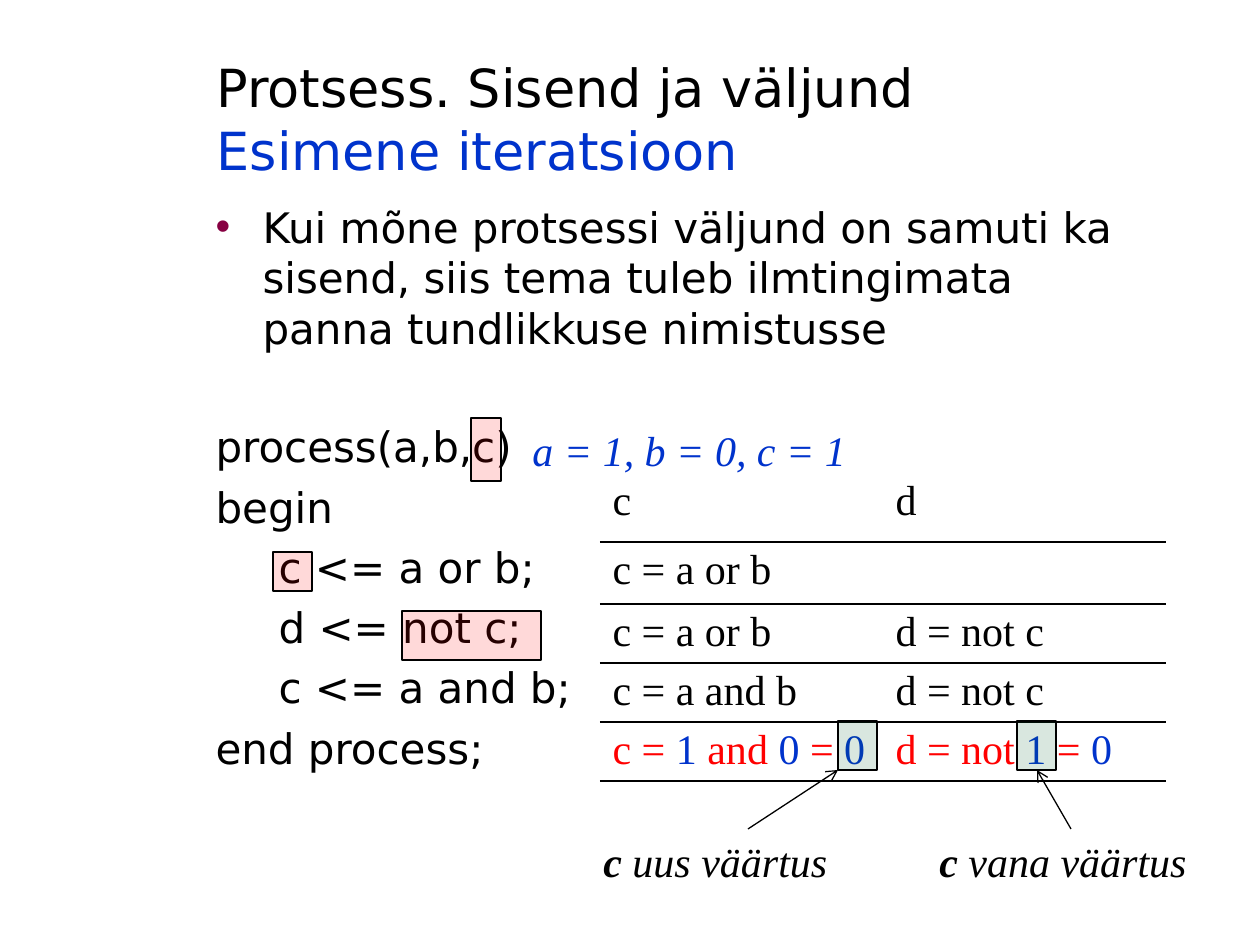
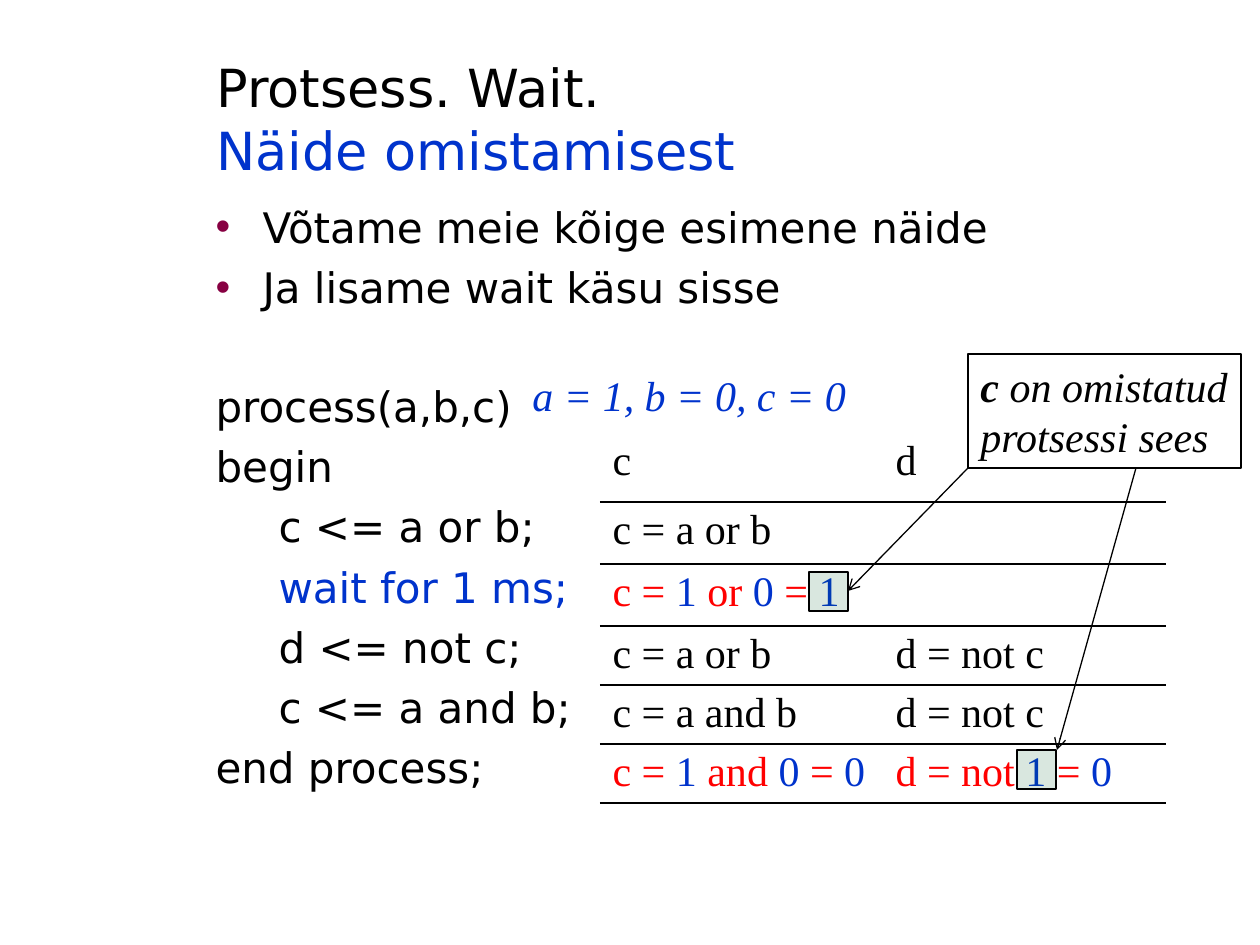
from lxml.etree import SubElement as Sub
from pptx import Presentation
from pptx.dml.color import RGBColor as Rgb
from pptx.enum.shapes import MSO_CONNECTOR as Link, MSO_SHAPE as Form
from pptx.enum.text import MSO_ANCHOR as Anchor, MSO_AUTO_SIZE as Fit, PP_ALIGN as Align
from pptx.oxml import parse_xml
from pptx.oxml.ns import qn
from pptx.util import Inches, Pt

# Shared look
HUE = dict(ink="000000", blue="0033CC", red="FF0000", green="00642D", dot="870042")
SANS, SERIF = "DejaVu Sans", "Times New Roman"
NS = 'xmlns:a="http://schemas.openxmlformats.org/drawingml/2006/main"'
PLAIN = "{2D5ABB26-0587-4C30-8999-92F81FD0307C}"
TITLE, BODY = (204, 59, 937, 118), (203, 195, 942, 667)
STEP, GAP = 5.6, 39.1  # points before a line, and before the code
HEAD, TALL, LOW = 69, 62, 59  # table row heights

# Content: code lines are (level, text, colour); a bar in a cell switches red and blue
SLIDES = [
    dict(
        title=("Protsess. Sisend ja väljund", "Esimene iteratsioon"),
        points=["Kui mõne protsessi väljund on samuti ka sisend, siis tema tuleb "
                "ilmtingimata panna tundlikkuse nimistusse"],
        code=[(0, "process(a,b,c)", "ink"), (0, "begin", "ink"),
              (1, "c <= a or b;", "ink"), (1, "d <= not c;", "ink"),
              (1, "c <= a and b;", "ink"), (0, "end process;", "ink")],
        top=473,
        rows=[("c", "d"), ("c = a or b", ""), ("c = a or b", "d = not c"),
              ("c = a and b", "d = not c"),
              ("c = |1| and |0| = |0", "d = not |1| = |0")],
        state=("a = 1, b = 0, c = 1", 418),
        marks=[("red", 402, 611, 139, 49), ("red", 471, 418, 30, 63),
               ("red", 273, 552, 39, 39),
               ("green", 1017, 721, 39, 49), ("green", 838, 721, 39, 49)],
        notes=[(" uus väärtus", (591, 829, 318, 63), False),
               (" vana väärtus", (927, 829, 287, 63), False)],
        arrows=[(748, 829, 838, 770), (1071, 829, 1037, 770)],
    ),
    dict(
        title=("Protsess. Wait.", "Näide omistamisest"),
        points=["Võtame meie kõige esimene näide", "Ja lisame wait käsu sisse"],
        code=[(0, "process(a,b,c)", "ink"), (0, "begin", "ink"),
              (1, "c <= a or b;", "ink"), (1, "wait for 1 ms;", "blue"),
              (1, "d <= not c;", "ink"), (1, "c <= a and b;", "ink"),
              (0, "end process;", "ink")],
        top=433,
        rows=[("c", "d"), ("c = a or b", ""), ("c = |1| or |0| = |1", ""),
              ("c = a or b", "d = not c"), ("c = a and b", "d = not c"),
              ("c = |1| and |0| = |0", "d = not |1 |= |0")],
        state=("a = 1, b = 0, c = 0", 363),
        marks=[("green", 809, 572, 39, 39), ("green", 1017, 750, 39, 39)],
        notes=[(" on omistatud protsessi sees", (968, 354, 273, 114), True)],
        arrows=[(968, 468, 848, 591), (1136, 468, 1057, 750)],
    ),
]


# Helpers
def px(*vals):
    return [round(v * Inches(1) / 126) for v in vals]


def put(obj, **vals):
    for key, val in vals.items():
        setattr(obj, key, val)


def rgb(hue):
    return Rgb.from_string(HUE[hue])


def write(para, text, hue="ink", face=SERIF, size=24, **more):
    run = para.add_run()
    run.text = text
    put(run.font, name=face, size=Pt(size), **more)
    run.font.color.rgb = rgb(hue)


def place(shape, box):
    put(shape, **dict(zip(("left", "top", "width", "height"), px(*box))))


def frame(shape, **vals):
    put(shape.text_frame, word_wrap=True, auto_size=Fit.NONE, **vals)
    return shape.text_frame


def line(shape, width=0.75):
    shape.line.color.rgb = rgb("ink")
    shape.line.width = Pt(width)


# Parts
def add_title(slide, lines):
    shape = slide.shapes.title
    place(shape, TITLE)
    para = frame(shape, vertical_anchor=Anchor.MIDDLE).paragraphs[0]
    para.alignment = Align.LEFT
    write(para, lines[0], face=SANS, size=30)
    para.add_line_break()
    write(para, lines[1], "blue", SANS, 30)


def add_body(slide, points, code):
    shape = slide.placeholders[1]
    place(shape, BODY)
    text = frame(shape, vertical_anchor=Anchor.TOP)
    items = [(None, point, "ink") for point in points] + code
    for i, (level, words, hue) in enumerate(items):
        para = text.add_paragraph() if i else text.paragraphs[0]
        prop = para._p.get_or_add_pPr()
        left, hang = px(47, -47) if level is None else px(63 * level, 0)
        prop.set("marL", str(left))
        prop.set("indent", str(hang))
        if level is None:
            Sub(Sub(prop, qn("a:buClr")), qn("a:srgbClr"), val=HUE["dot"])
            Sub(prop, qn("a:buChar"), char="•")
        else:
            Sub(prop, qn("a:buNone"))
        space = 0 if i == 0 else GAP if i == len(points) else STEP
        put(para, space_before=Pt(space), alignment=Align.LEFT)
        write(para, words, hue, SANS)


def add_grid(slide, top, rows):
    highs = [HEAD] + [LOW if all(row) else TALL for row in rows[1:]]
    box = px(600, top, 566, sum(highs))
    grid = slide.shapes.add_table(len(rows), 2, *box).table
    put(grid, first_row=False, horz_banding=False)
    grid._tbl.tblPr[0].text = PLAIN
    for r, row in enumerate(rows):
        grid.rows[r].height = px(highs[r])[0]
        for c, words in enumerate(row):
            cell = grid.cell(r, c)
            edge = px(5)[0]
            put(cell, margin_top=edge, margin_bottom=edge)
            cell.fill.background()
            rule = parse_xml(f'<a:lnB {NS} w="12700"><a:solidFill><a:srgbClr '
                             f'val="{HUE["ink"]}"/></a:solidFill></a:lnB>')
            cell._tc.get_or_add_tcPr().insert(0, rule)
            bits = words.split("|") if words else []
            for i, bit in enumerate(bits):
                hue = ("red", "blue")[i % 2] if len(bits) > 1 else "ink"
                write(cell.text_frame.paragraphs[0], bit, hue)


def add_mark(slide, hue, *box):
    mark = slide.shapes.add_shape(Form.RECTANGLE, *px(*box))
    mark.shadow.inherit = False
    mark.fill.solid()
    mark.fill.fore_color.rgb = rgb(hue)
    tint = mark._element.spPr.find(qn("a:solidFill"))[0]
    Sub(tint, qn("a:alpha"), val="15000")
    line(mark)


def add_note(slide, words, box, framed):
    note = slide.shapes.add_textbox(*px(*box))
    para = frame(note, margin_right=px(6)[0]).paragraphs[0]
    write(para, "c", bold=True, italic=True)
    write(para, words, italic=True)
    if framed:
        line(note)


def add_arrow(slide, *ends):
    arrow = slide.shapes.add_connector(Link.STRAIGHT, *px(*ends))
    line(arrow)
    Sub(arrow.line._get_or_add_ln(), qn("a:tailEnd"), type="arrow")
    Sub(arrow._element.spPr, qn("a:effectLst"))


def main():
    deck = Presentation()
    put(deck, slide_width=Inches(10), slide_height=Inches(7.5))
    for page in SLIDES:
        slide = deck.slides.add_slide(deck.slide_layouts[1])
        add_title(slide, page["title"])
        add_body(slide, page["points"], page["code"])
        add_grid(slide, page["top"], page["rows"])
        words, top = page["state"]
        state = slide.shapes.add_textbox(*px(520, top, 348, 63))
        write(frame(state).paragraphs[0], words, "blue", italic=True)
        for part, key in ((add_mark, "marks"), (add_note, "notes"), (add_arrow, "arrows")):
            for item in page[key]:
                part(slide, *item)
    deck.save("out.pptx")


if __name__ == "__main__":
    main()
